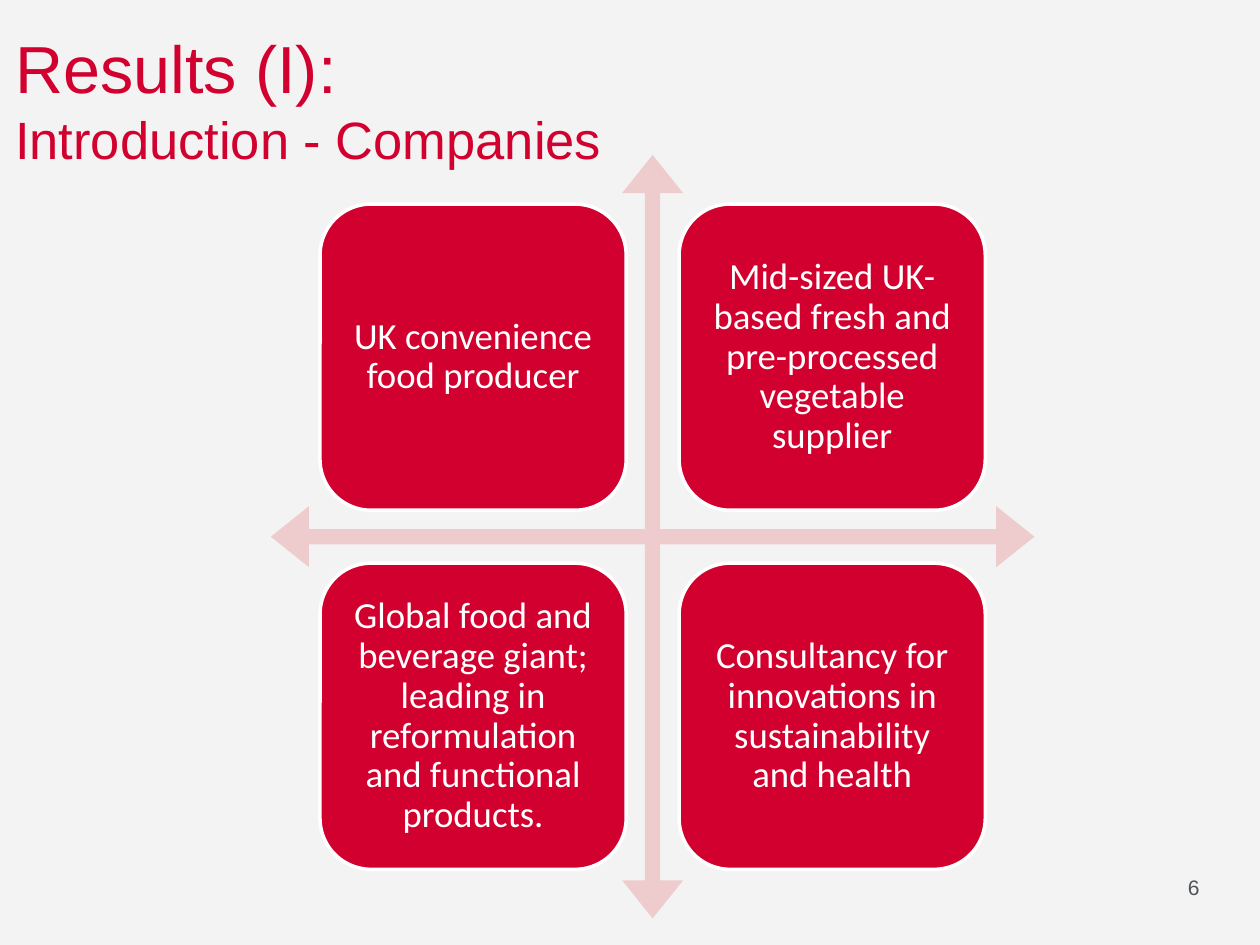
"""Build the results slide introducing the four companies."""
from typing import NamedTuple

from pptx import Presentation
from pptx import util as u
from pptx.dml.color import RGBColor
from pptx.enum import shapes, text

RED, PINK, WHITE, GREY, PAPER = "D2002E", "EECCCD", "FFFFFF", "50535A", "F3F3F3"
LEFT, TOP, SIZE, PITCH = 2.54, 1.62, 2.43, 2.85


class Company(NamedTuple):
    row: int
    col: int
    description: str


COMPANIES = [
    Company(0, 0, "UK convenience food producer"),
    Company(0, 1, "Mid-sized UK-based fresh and pre-processed vegetable supplier"),
    Company(1, 0, "Global food and beverage giant; leading in reformulation "
                  "and functional products."),
    Company(1, 1, "Consultancy for innovations in sustainability and health"),
]


def paint(fmt, color: str) -> None:
    fmt.solid()
    fmt.fore_color.rgb = RGBColor.from_string(color)


def add_text(p, content: str, *, size: float, color: str, font: str = "Arial",
             align=text.PP_ALIGN.LEFT, spacing: float = 1.0) -> None:
    p.alignment, p.line_spacing = align, spacing
    r = p.add_run()
    r.text = content
    r.font.size, r.font.name = u.Pt(size), font
    r.font.color.rgb = RGBColor.from_string(color)


def set_frame(tf, *, margin: float, anchor, wrap: bool = True) -> None:
    tf.margin_left = tf.margin_right = u.Inches(margin)
    tf.margin_top = tf.margin_bottom = u.Inches(margin)
    tf.vertical_anchor, tf.word_wrap = anchor, wrap
    tf.auto_size = text.MSO_AUTO_SIZE.NONE


def add_square(s, kind, left: float, top: float, size: float, color: str):
    sp = s.shapes.add_shape(kind, *map(u.Inches, (left, top, size, size)))
    sp.shadow.inherit = False
    paint(sp.fill, color)
    sp.line.fill.background()
    return sp


def add_arrows(s) -> None:
    sp = add_square(s, shapes.MSO_SHAPE.QUAD_ARROW, 2.15, 1.23, 6.06, PINK)
    for i, value in enumerate((0.02, 0.04, 0.05)):
        sp.adjustments[i] = value


def add_company(s, company: Company) -> None:
    sp = add_square(s, shapes.MSO_SHAPE.ROUNDED_RECTANGLE,
                    LEFT + company.col * PITCH, TOP + company.row * PITCH, SIZE, RED)
    paint(sp.line.fill, WHITE)
    sp.line.width = u.Pt(2)
    set_frame(sp.text_frame, margin=0.09, anchor=text.MSO_ANCHOR.MIDDLE)
    add_text(sp.text_frame.paragraphs[0], company.description, size=21, color=WHITE,
             font="Calibri", align=text.PP_ALIGN.CENTER, spacing=0.9)


def add_title(s) -> None:
    sp = s.shapes.title
    sp.left, sp.top, sp.width, sp.height = map(u.Inches, (0.12, 0.44, 9.06, 0.91))
    set_frame(sp.text_frame, margin=0, anchor=text.MSO_ANCHOR.BOTTOM, wrap=False)
    p = sp.text_frame.paragraphs[0]
    add_text(p, "Results (I): ", size=38, color=RED)
    p.add_line_break()
    add_text(p, "Introduction - Companies", size=30, color=RED)


def add_page_number(s, number: str) -> None:
    sp = s.shapes.add_textbox(*map(u.Inches, (8.78, 6.94, 0.74, 0.28)))
    set_frame(sp.text_frame, margin=0, anchor=text.MSO_ANCHOR.TOP)
    add_text(sp.text_frame.paragraphs[0], number, size=12, color=GREY,
             align=text.PP_ALIGN.RIGHT)


def main() -> None:
    prs = Presentation()
    prs.slide_width, prs.slide_height = u.Inches(10), u.Inches(7.5)
    s = prs.slides.add_slide(prs.slide_layouts[5])
    paint(s.background.fill, PAPER)
    add_arrows(s)
    for company in COMPANIES:
        add_company(s, company)
    add_page_number(s, "6")
    add_title(s)
    prs.save("out.pptx")


if __name__ == "__main__":
    main()
